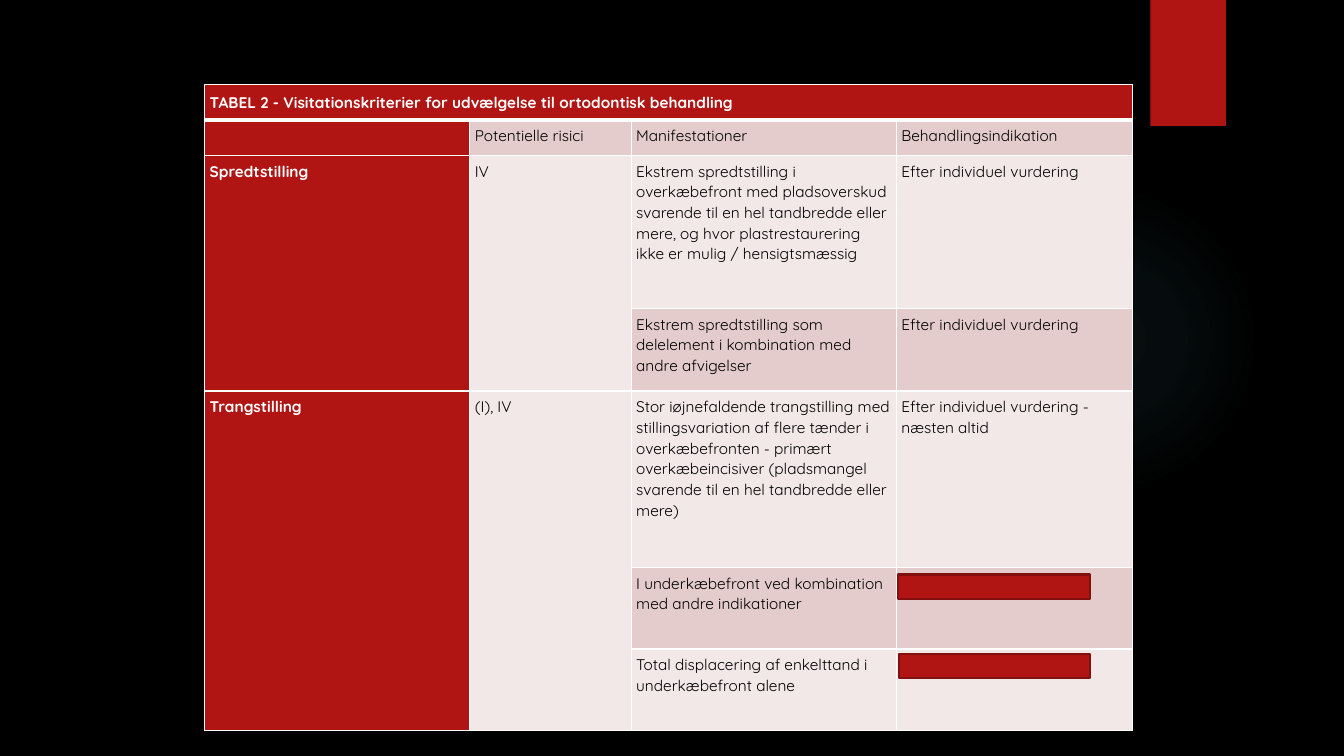
from dataclasses import dataclass

from lxml.etree import SubElement
from pptx import Presentation
from pptx.dml.color import RGBColor as RGB
from pptx.enum.shapes import MSO_SHAPE as SHAPE
from pptx.enum.text import MSO_ANCHOR as ANCHOR
from pptx.oxml import parse_xml
from pptx.oxml.ns import nsdecls, qn
from pptx.util import Inches, Pt


@dataclass(frozen=True)
class Theme:
    font: str = "Quicksand"
    size: float = 11
    spacing: float = 1.07
    inset: float = 0.05
    back: str = "000000"
    ink: str = "000000"
    white: str = "FFFFFF"
    red: str = "B01513"
    dark_red: str = "82100E"
    rose: str = "E4CCCC"
    pale: str = "F2E8E7"
    glow: str = "50B9C1"


COLUMNS = [2.63, 1.6, 2.63, 2.34]
HEIGHTS = [0.35, 0.35, 1.52, 0.82, 1.75, 0.81, 0.81]
ROWS = [
    ["TABEL 2 - Visitationskriterier for udvælgelse til ortodontisk behandling", "", "", ""],
    ["", "Potentielle risici", "Manifestationer", "Behandlingsindikation"],
    ["Spredtstilling", "IV",
     "Ekstrem spredtstilling i overkæbefront med pladsoverskud svarende til en hel "
     "tandbredde eller mere, og hvor plastrestaurering ikke er mulig / hensigtsmæssig",
     "Efter individuel vurdering"],
    ["", "", "Ekstrem spredtstilling som delelement i kombination med andre afvigelser",
     "Efter individuel vurdering"],
    ["Trangstilling", "(I), IV",
     "Stor iøjnefaldende trangstilling med stillingsvariation af flere tænder i "
     "overkæbefronten - primært overkæbeincisiver (pladsmangel svarende til en hel "
     "tandbredde eller mere)",
     "Efter individuel vurdering - næsten altid"],
    ["", "", "I underkæbefront ved kombination med andre indikationer", ""],
    ["", "", "Total displacering af enkelttand i underkæbefront alene", ""],
]
MERGES = [(0, 0, 0, 3), (2, 0, 3, 0), (2, 1, 3, 1), (4, 0, 6, 0), (4, 1, 6, 1)]
GLOW_STOPS = [(0, 7), (36, 6), (69, 0)]


def write(tf, text, font, size, color, bold=False, spacing=1.0):
    p = tf.paragraphs[0]
    p.line_spacing = spacing
    if not text:
        SubElement(p._p, qn("a:endParaRPr"), sz=str(int(size * 100)))
        return
    r = p.add_run()
    r.text = text
    r.font.name, r.font.size, r.font.bold = font, Pt(size), bold
    r.font.color.rgb = RGB.from_string(color)


class Deck:
    def __init__(self, theme):
        self.theme = theme
        self.prs = Presentation()
        self.prs.slide_width, self.prs.slide_height = Inches(13.33), Inches(7.5)
        self.s = self.prs.slides.add_slide(self.prs.slide_layouts[6])
        fill = self.s.background.fill
        fill.solid()
        fill.fore_color.rgb = RGB.from_string(theme.back)

    def shape(self, kind, box, color, line=None):
        sp = self.s.shapes.add_shape(kind, *map(Inches, box))
        sp.shadow.inherit = False
        sp.fill.solid()
        sp.fill.fore_color.rgb = RGB.from_string(color)
        if line:
            sp.line.color.rgb = RGB.from_string(line)
            sp.line.width = Pt(1.5)
        else:
            sp.line.fill.background()
        return sp

    def glow(self, box):
        sp = self.shape(SHAPE.OVAL, box, self.theme.glow)
        stops = "".join(
            f'<a:gs pos="{pos * 1000}"><a:srgbClr val="{self.theme.glow}">'
            f'<a:alpha val="{alpha * 1000}"/></a:srgbClr></a:gs>'
            for pos, alpha in GLOW_STOPS)
        gradient = parse_xml(
            f'<a:gradFill {nsdecls("a")}><a:gsLst>{stops}</a:gsLst><a:path path="circle">'
            '<a:fillToRect l="50000" t="50000" r="50000" b="50000"/></a:path></a:gradFill>')
        solid = sp._element.spPr.find(qn("a:solidFill"))
        solid.getparent().replace(solid, gradient)

    def borders(self, cell, row):
        tc_pr = cell._tc.get_or_add_tcPr()
        thick = {"T": row == 1, "B": row == 0}
        for i, side in enumerate("LRTB"):
            width = Pt(3 if thick.get(side) else 1)
            tc_pr.insert(i, parse_xml(
                f'<a:ln{side} {nsdecls("a")} w="{width}"><a:solidFill>'
                f'<a:srgbClr val="{self.theme.white}"/></a:solidFill></a:ln{side}>'))

    def cell(self, cell, row, col, text):
        t = self.theme
        head = row == 0 or col == 0
        if head:
            color = t.red
        elif col == 1 and row > 1:
            color = t.pale
        else:
            color = t.rose if row % 2 else t.pale
        cell.fill.solid()
        cell.fill.fore_color.rgb = RGB.from_string(color)
        cell.margin_left = cell.margin_right = Inches(t.inset)
        cell.margin_top = cell.margin_bottom = Inches(t.inset)
        cell.vertical_anchor = ANCHOR.MIDDLE if row == 0 else ANCHOR.TOP
        write(cell.text_frame, text, font=t.font, size=t.size, bold=head,
              color=t.white if head else t.ink, spacing=t.spacing)
        self.borders(cell, row)

    def table(self, left, top, columns, heights, rows, merges):
        box = map(Inches, (left, top, sum(columns), sum(heights)))
        tbl = self.s.shapes.add_table(len(rows), len(columns), *box).table
        for column, width in zip(tbl.columns, columns):
            column.width = Inches(width)
        for row, height in zip(tbl.rows, heights):
            row.height = Inches(height)
        for i, texts in enumerate(rows):
            for j, text in enumerate(texts):
                self.cell(tbl.cell(i, j), i, j, text)
        for top_row, left_col, last_row, last_col in merges:
            tbl.cell(top_row, left_col).merge(tbl.cell(last_row, last_col))


def main():
    theme = Theme()
    deck = Deck(theme)
    deck.glow((9.41, 1.83, 3.08, 3.08))
    deck.shape(SHAPE.RECTANGLE, (11.41, 0, 0.75, 1.25), theme.red)
    deck.table(2.03, 0.84, COLUMNS, HEIGHTS, ROWS, MERGES)
    for bar in [(8.91, 5.7, 1.9, 0.24), (8.92, 6.49, 1.89, 0.24)]:
        deck.shape(SHAPE.RECTANGLE, bar, theme.red, line=theme.dark_red)
    deck.prs.save("out.pptx")


if __name__ == "__main__":
    main()
